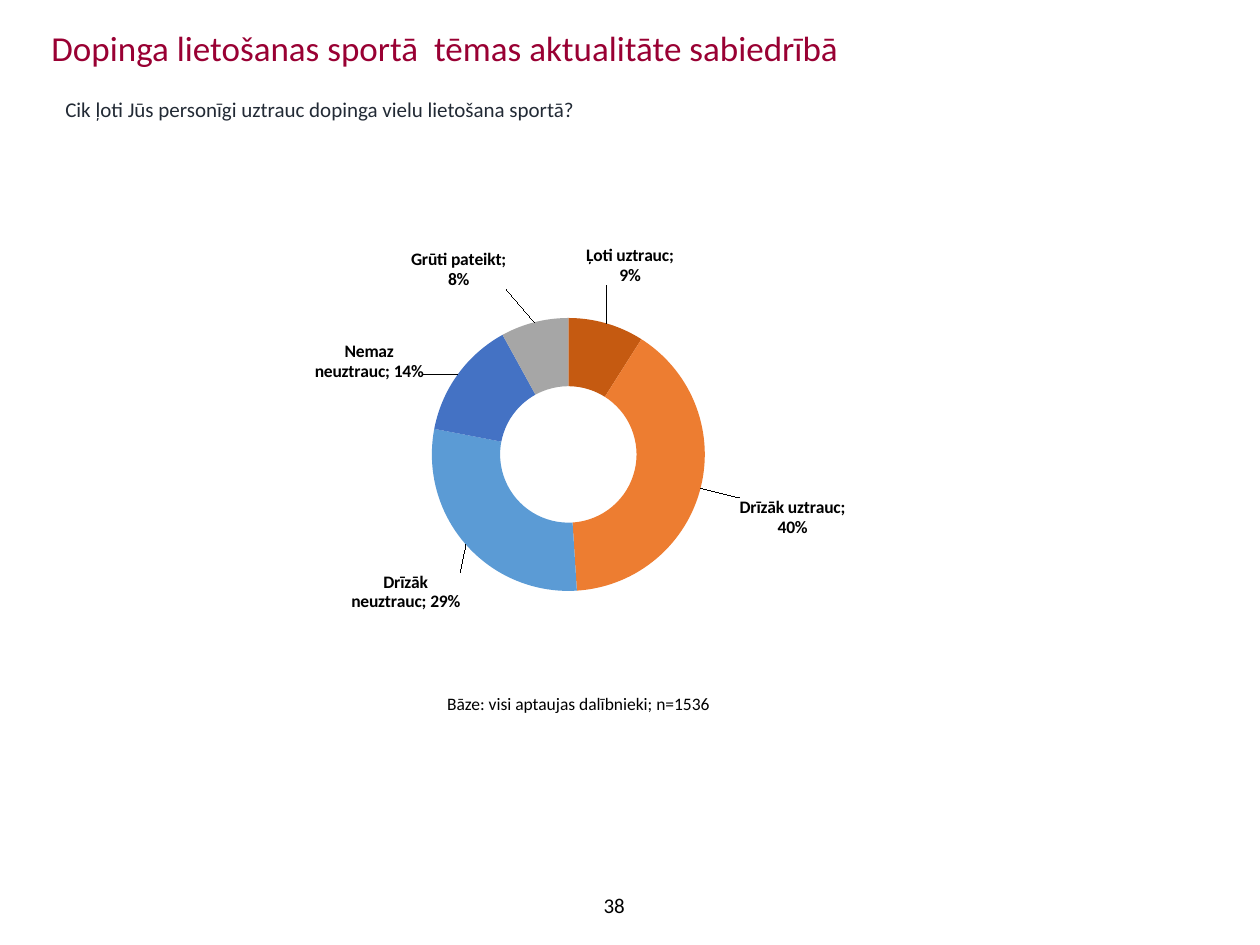
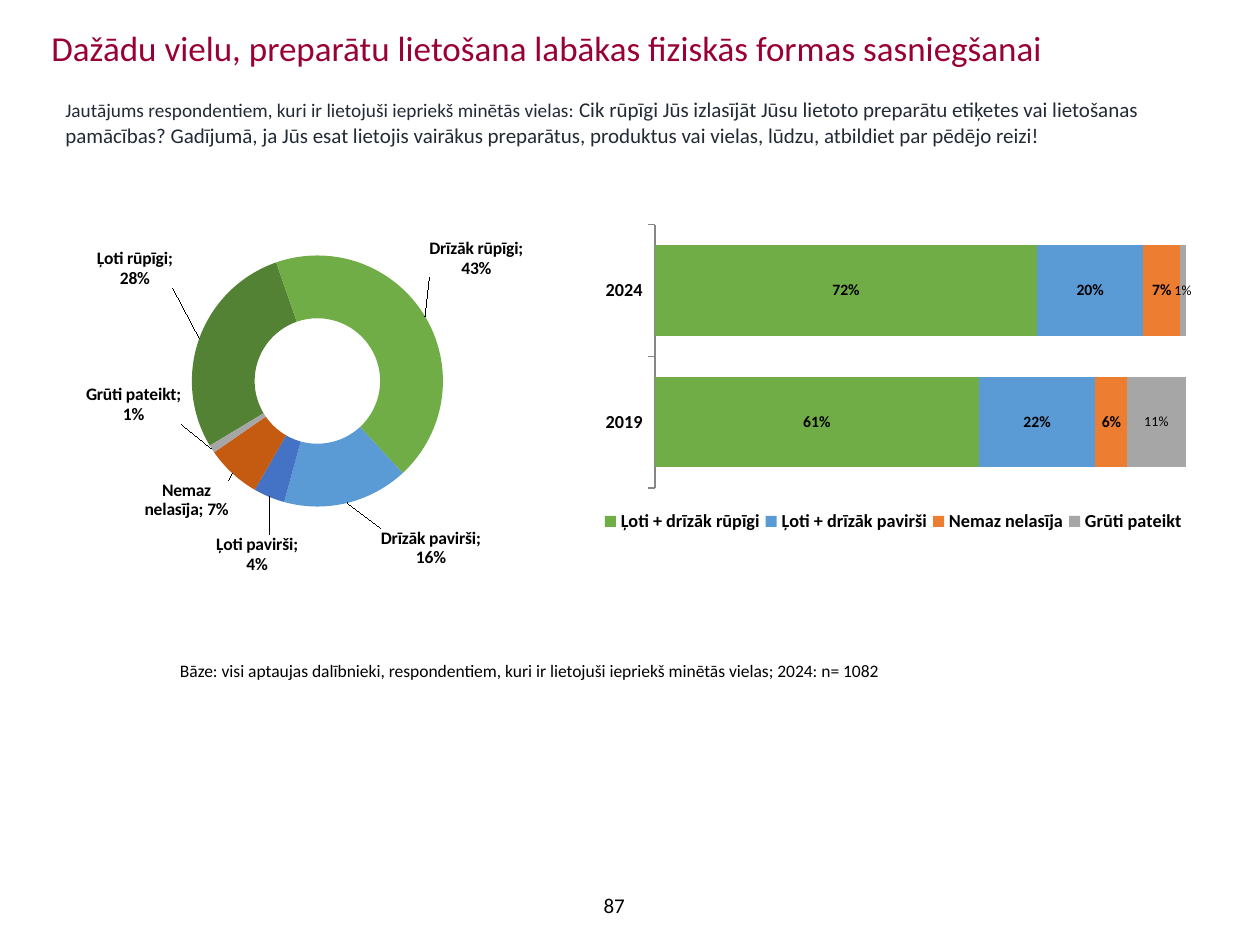
from dataclasses import dataclass
from itertools import accumulate
from math import cos, radians, sin

from pptx import Presentation
from pptx.chart.chart import Chart
from pptx.chart.data import CategoryChartData
from pptx.dml.color import RGBColor
from pptx.enum.chart import XL_CHART_TYPE, XL_LEGEND_POSITION, XL_TICK_LABEL_POSITION, XL_TICK_MARK
from pptx.enum.text import MSO_ANCHOR, PP_ALIGN
from pptx.oxml import parse_xml
from pptx.oxml.ns import nsdecls, qn
from pptx.slide import Slide
from pptx.util import Inches, Pt

FONT = "Calibri"
TITLE_RED, QUESTION_NAVY, BLACK, AXIS_GREY = "990033", "222A35", "000000", "868686"
GREEN, DARK_GREEN = "70AD47", "548235"
ORANGE, DARK_ORANGE = "ED7D31", "C55A11"
LIGHT_BLUE, BLUE, GREY = "5B9BD5", "4472C4", "A6A6A6"


@dataclass(frozen=True)
class Box:
    left: float
    top: float
    width: float
    height: float

    def inches(self) -> tuple:
        return tuple(Inches(v) for v in (self.left, self.top, self.width, self.height))


@dataclass(frozen=True)
class Slice:
    """One ring segment; label_x and label_y are the label's centre on the slide in inches."""
    name: str
    value: float
    color: str
    label_x: float
    label_y: float


@dataclass(frozen=True)
class BarSeries:
    name: str
    values: tuple[float, ...]
    color: str
    label_size: float = 9
    label_bold: bool = True


WORRY = [
    Slice("Ļoti uztrauc", 0.09, DARK_ORANGE, 5.0, 2.11),
    Slice("Drīzāk uztrauc", 0.40, ORANGE, 6.29, 4.11),
    Slice("Drīzāk neuztrauc", 0.29, LIGHT_BLUE, 3.22, 4.7),
    Slice("Nemaz neuztrauc", 0.14, BLUE, 2.93, 2.87),
    Slice("Grūti pateikt", 0.08, GREY, 3.64, 2.14),
]
CARE = [
    Slice("Ļoti rūpīgi", 0.28, DARK_GREEN, 1.07, 2.13),
    Slice("Drīzāk rūpīgi", 0.43, GREEN, 3.78, 2.05),
    Slice("Drīzāk pavirši", 0.16, LIGHT_BLUE, 3.42, 4.35),
    Slice("Ļoti pavirši", 0.04, BLUE, 2.04, 4.4),
    Slice("Nemaz nelasīja", 0.07, DARK_ORANGE, 1.48, 3.97),
    Slice("Grūti pateikt", 0.01, GREY, 1.06, 3.21),
]
YEARS = ("2019", "2024")
CARE_BY_YEAR = [
    BarSeries("Ļoti + drīzāk rūpīgi", (0.61, 0.72), GREEN),
    BarSeries("Ļoti + drīzāk pavirši", (0.22, 0.20), LIGHT_BLUE),
    BarSeries("Nemaz nelasīja", (0.06, 0.07), ORANGE),
    BarSeries("Grūti pateikt", (0.11, 0.01), GREY, 8, False),
]


def rgb(color: str) -> RGBColor:
    return RGBColor.from_string(color)


def style_font(font, size: float, color: str = BLACK, bold: bool = False) -> None:
    font.name, font.size, font.bold = FONT, Pt(size), bold
    font.color.rgb = rgb(color)


def add_text(slide: Slide, box: Box, text: str, size: float, color: str = BLACK,
             wrap: bool = True, centred: bool = False):
    tf = slide.shapes.add_textbox(*box.inches()).text_frame
    tf.word_wrap = wrap
    p = tf.paragraphs[0]
    if text:
        p.text = text
        style_font(p.font, size, color)
    if centred:
        tf.vertical_anchor = MSO_ANCHOR.MIDDLE
        p.alignment = PP_ALIGN.CENTER
    return p


def add_page(prs, title: str, number: int) -> Slide:
    slide = prs.slides.add_slide(prs.slide_layouts[6])
    add_text(slide, Box(0.31, 0.16, 9.37, 0.49), title, 20, TITLE_RED)
    add_text(slide, Box(3.71, 6.98, 2.33, 0.4), str(number), 12, centred=True)
    return slide


def layout_xml(box: Box, inner: bool = False):
    """Manual layout in fractions of the chart area."""
    target = '<c:layoutTarget val="inner"/>' if inner else ""
    return parse_xml(
        f'<c:layout {nsdecls("c")}><c:manualLayout>{target}'
        '<c:xMode val="edge"/><c:yMode val="edge"/>'
        f'<c:x val="{box.left}"/><c:y val="{box.top}"/>'
        f'<c:w val="{box.width}"/><c:h val="{box.height}"/>'
        '</c:manualLayout></c:layout>')


def set_plot_area(chart: Chart, plot: Box) -> None:
    area = chart._chartSpace.chart.plotArea
    for old in area.findall(qn("c:layout")):
        area.remove(old)
    area.insert(0, layout_xml(plot, inner=True))


def add_chart(slide: Slide, kind, box: Box, plot: Box, categories, series) -> Chart:
    data = CategoryChartData(number_format="0%")
    data.categories = categories
    for name, values in series:
        data.add_series(name, values)
    chart = slide.shapes.add_chart(kind, *box.inches(), data).chart
    chart.has_title = False
    chart.has_legend = False
    style_font(chart.font, 18)
    set_plot_area(chart, plot)
    return chart


def slice_label(index: int, dx: float, dy: float):
    """Label moved by dx, dy (fractions of the chart) from the middle of its segment."""
    return parse_xml(
        f'<c:dLbl {nsdecls("c", "a")}><c:idx val="{index}"/>'
        f'<c:layout><c:manualLayout><c:x val="{dx:.4f}"/><c:y val="{dy:.4f}"/>'
        '</c:manualLayout></c:layout><c:numFmt formatCode="0%" sourceLinked="0"/>'
        '<c:spPr><a:noFill/><a:ln><a:noFill/></a:ln></c:spPr>'
        '<c:txPr><a:bodyPr/><a:p><a:pPr><a:defRPr sz="1000" b="1">'
        f'<a:solidFill><a:srgbClr val="{BLACK}"/></a:solidFill><a:latin typeface="{FONT}"/>'
        '</a:defRPr></a:pPr><a:endParaRPr lang="lv-LV"/></a:p></c:txPr>'
        '<c:showLegendKey val="0"/><c:showVal val="1"/><c:showCatName val="1"/>'
        '<c:showSerName val="0"/><c:showPercent val="0"/><c:showBubbleSize val="0"/>'
        '<c:separator>; </c:separator></c:dLbl>')


def add_doughnut(slide: Slide, box: Box, plot: Box, slices: list[Slice], start: int) -> None:
    values = [s.value for s in slices]
    chart = add_chart(slide, XL_CHART_TYPE.DOUGHNUT, box, plot,
                      [s.name for s in slices], [("Series 1", values)])
    ring = chart._chartSpace.chart.plotArea.find(qn("c:doughnutChart"))
    ring.find(qn("c:firstSliceAng")).set("val", str(start))
    ring.find(qn("c:holeSize")).set("val", "40")

    series = chart.plots[0].series[0]
    labels = series.data_labels
    labels.show_value = labels.show_category_name = True
    labels.number_format, labels.number_format_is_linked = "0%", False
    style_font(labels.font, 10, bold=True)

    centre_x = box.left + box.width * (plot.left + plot.width / 2)
    centre_y = box.top + box.height * (plot.top + plot.height / 2)
    mid_radius = 0.75 * min(box.width * plot.width, box.height * plot.height) / 2
    for i, (s, end) in enumerate(zip(slices, accumulate(values))):
        fill = series.points[i].format.fill
        fill.solid()
        fill.fore_color.rgb = rgb(s.color)
        angle = radians(start + 360 * (end - s.value / 2) / sum(values))
        dx = (s.label_x - centre_x - mid_radius * sin(angle)) / box.width
        dy = (s.label_y - centre_y + mid_radius * cos(angle)) / box.height
        labels._element.insert(i, slice_label(i, dx, dy))


def add_year_bars(slide: Slide, box: Box, plot: Box, bars: list[BarSeries]) -> None:
    chart = add_chart(slide, XL_CHART_TYPE.BAR_STACKED_100, box, plot,
                      YEARS, [(b.name, b.values) for b in bars])
    chart.plots[0].gap_width, chart.plots[0].overlap = 45, 100
    for bar, series in zip(bars, chart.plots[0].series):
        series.format.fill.solid()
        series.format.fill.fore_color.rgb = rgb(bar.color)
        labels = series.data_labels
        labels.show_value = True
        labels.number_format, labels.number_format_is_linked = "0%", False
        style_font(labels.font, bar.label_size, bold=bar.label_bold)

    chart.value_axis.visible = False
    chart.value_axis.has_major_gridlines = False
    axis = chart.category_axis
    axis.major_tick_mark = XL_TICK_MARK.OUTSIDE
    axis.tick_label_position = XL_TICK_LABEL_POSITION.LOW
    axis.format.line.color.rgb = rgb(AXIS_GREY)
    style_font(axis.tick_labels.font, 10.5, bold=True)

    chart.has_legend = True
    legend = chart.legend
    legend.position = XL_LEGEND_POSITION.BOTTOM
    legend.include_in_layout = False
    style_font(legend.font, 10.5, bold=True)
    for old in legend._element.findall(qn("c:layout")):
        legend._element.remove(old)
    legend._element.find(qn("c:legendPos")).addnext(layout_xml(Box(0.02, 0.89, 0.98, 0.1)))


def build_worry_slide(prs) -> None:
    slide = add_page(prs, "Dopinga lietošanas sportā  tēmas aktualitāte sabiedrībā", 38)
    add_text(slide, Box(0.42, 0.72, 9.26, 0.42),
             "Cik ļoti Jūs personīgi uztrauc dopinga vielu lietošana sportā?", 12, QUESTION_NAVY)
    add_doughnut(slide, Box(2.05, 1.7, 4.83, 4.02), Box(0.25, 0.205, 0.519, 0.539), WORRY, 0)
    add_text(slide, Box(3.45, 5.45, 2.31, 0.27),
             "Bāze: visi aptaujas dalībnieki; n=1536", 10, wrap=False)


def build_care_slide(prs) -> None:
    slide = add_page(
        prs, "Dažādu vielu, preparātu lietošana labākas fiziskās formas sasniegšanai", 87)
    question = add_text(slide, Box(0.42, 0.72, 9.37, 0.58), "", 12)
    for text, size in (
        ("Jautājums respondentiem, kuri ir lietojuši iepriekš minētās vielas: ", 11),
        ("Cik rūpīgi Jūs izlasījāt Jūsu lietoto preparātu etiķetes vai lietošanas pamācības? "
         "Gadījumā, ja Jūs esat lietojis vairākus preparātus, produktus vai vielas, lūdzu, "
         "atbildiet par pēdējo reizi!", 12),
    ):
        r = question.add_run()
        r.text = text
        style_font(r.font, size, QUESTION_NAVY)
    add_text(slide, Box(1.33, 5.19, 5.79, 0.27),
             "Bāze: visi aptaujas dalībnieki, respondentiem, kuri ir lietojuši "
             "iepriekš minētās vielas; 2024: n= 1082", 10, wrap=False)
    add_year_bars(slide, Box(4.66, 1.77, 4.8, 2.52), Box(0.113, 0.005, 0.884, 0.83), CARE_BY_YEAR)
    add_doughnut(slide, Box(0.39, 1.31, 3.84, 3.7), Box(0.295, 0.194, 0.519, 0.539), CARE, 239)


def main() -> None:
    prs = Presentation()
    prs.slide_width, prs.slide_height = Inches(10), Inches(7.5)
    build_worry_slide(prs)
    build_care_slide(prs)
    prs.save("out.pptx")


if __name__ == "__main__":
    main()
